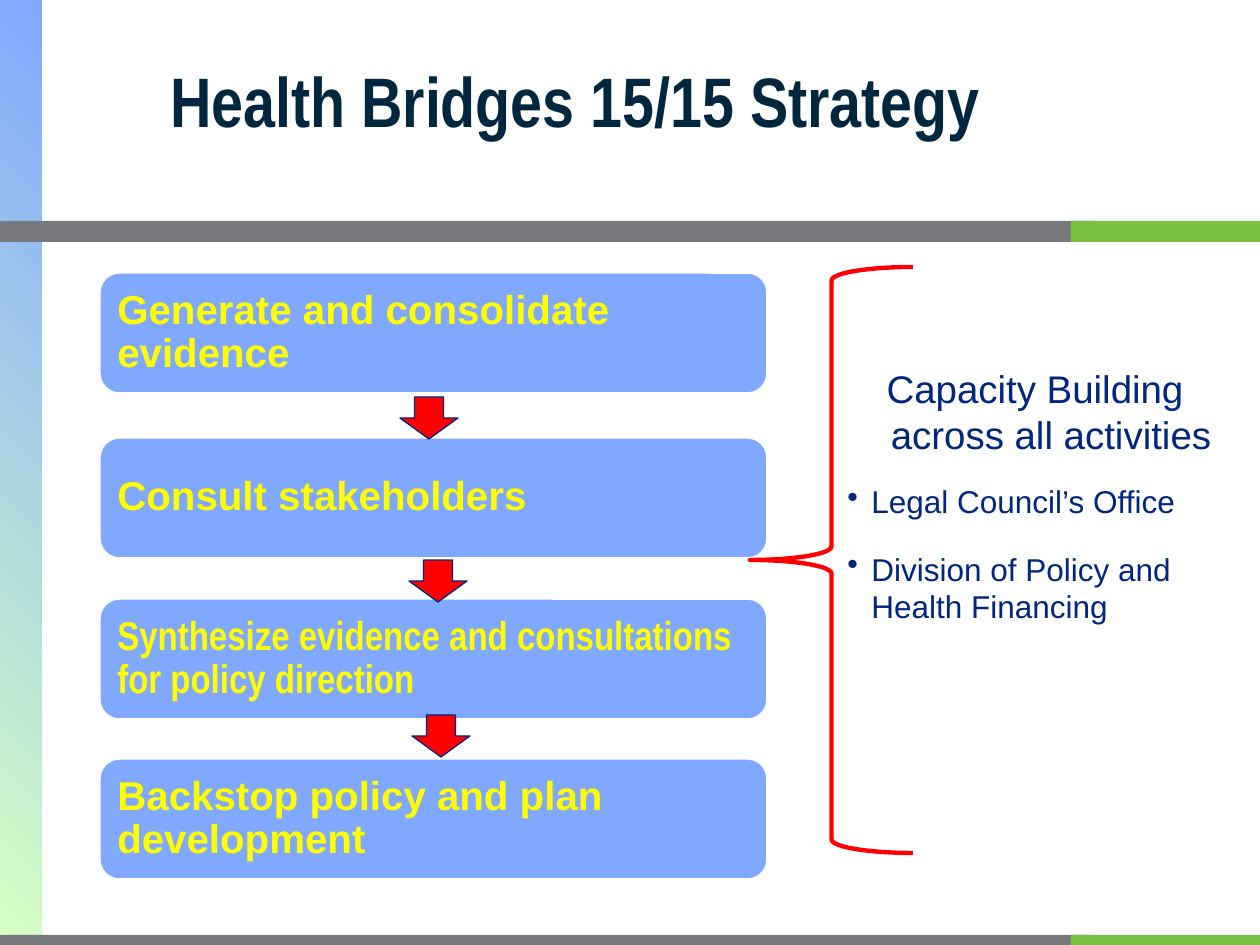
from lxml import etree
from pptx import Presentation
from pptx import util as u
from pptx.dml.color import RGBColor
from pptx.enum import shapes, text
from pptx.oxml import ns

PX = u.Inches(1) / 126
SKY = RGBColor(0x81, 0xA8, 0xFF)
MINT = RGBColor(0xD7, 0xFF, 0xC3)
GREY = RGBColor(0x77, 0x79, 0x7C)
GREEN = RGBColor(0x7A, 0xC1, 0x42)
INK = RGBColor(0x00, 0x27, 0x40)
NAVY = RGBColor(0x00, 0x26, 0x7F)
YELLOW = RGBColor(0xFF, 0xFF, 0x00)
RED = RGBColor(0xFF, 0x00, 0x00)
WHITE = RGBColor(0xFF, 0xFF, 0xFF)
KIND = shapes.MSO_SHAPE

deck = Presentation()
deck.slide_width, deck.slide_height = u.Inches(10), u.Inches(7.5)
slide = deck.slides.add_slide(deck.slide_layouts[6])


def draw(kind, box, fill=None, line=None, weight=1):
    part = slide.shapes.add_shape(kind, *(round(n * PX) for n in box))
    part.shadow.inherit = False
    if fill is None:
        part.fill.background()
    else:
        part.fill.solid()
        part.fill.fore_color.rgb = fill
    if line is None:
        part.line.fill.background()
    else:
        part.line.color.rgb = line
        part.line.width = u.Pt(weight)
    return part


def write(paragraph, words, size, color, font="Arial", bold=False):
    paragraph.text = words
    paragraph.font.size = u.Pt(size)
    paragraph.font.color.rgb = color
    paragraph.font.name = font
    paragraph.font.bold = bold


side_band = draw(KIND.RECTANGLE, (0, 0, 42, 945), SKY)
side_band.fill.gradient()
side_band.fill.gradient_angle = 45
for stop, color in zip(side_band.fill.gradient_stops, (MINT, SKY)):
    stop.color.rgb = color

for top, height in ((221, 21), (935, 10)):
    draw(KIND.RECTANGLE, (0, top, 1092, height), GREY)
    draw(KIND.RECTANGLE, (1071, top, 189, height), GREEN)

title = slide.shapes.add_textbox(*(round(n * PX) for n in (158, 21, 1040, 158))).text_frame
title.word_wrap = True
title.vertical_anchor = text.MSO_ANCHOR.MIDDLE
write(title.paragraphs[0], "Health Bridges 15/15 Strategy", 40, INK, "Arial Narrow", True)

steps = (
    (272, "Generate and consolidate evidence", "Arial"),
    (437, "Consult stakeholders", "Arial"),
    (598, "Synthesize evidence and consultations for policy direction", "Arial Narrow"),
    (758, "Backstop policy and plan development", "Arial"),
)
for top, words, font in steps:
    step = draw(KIND.ROUNDED_RECTANGLE, (99, top, 669, 122), SKY, WHITE, 2).text_frame
    step.word_wrap = True
    step.vertical_anchor = text.MSO_ANCHOR.MIDDLE
    write(step.paragraphs[0], words, 23, YELLOW, font, True)
    step.paragraphs[0].alignment = text.PP_ALIGN.LEFT
    step.paragraphs[0].line_spacing = 0.9

capacity = slide.shapes.add_textbox(*(round(n * PX) for n in (835, 359, 400, 310))).text_frame
capacity.word_wrap = True
entries = (
    ("Capacity Building", 22, 0, 0, False),
    ("across all activities", 22, 32, 0, False),
    ("Legal Council’s Office", 18, 24, 14, True),
    ("Division of Policy and Health Financing", 18, 24, 17, True),
)
for index, (words, size, indent, gap, bulleted) in enumerate(entries):
    entry = capacity.add_paragraph() if index else capacity.paragraphs[0]
    write(entry, words, size, NAVY)
    entry.alignment = text.PP_ALIGN.LEFT if bulleted else text.PP_ALIGN.CENTER
    entry.space_before = u.Pt(gap)
    layout = entry._p.get_or_add_pPr()
    layout.set("marL", str(round(indent * PX)))
    if bulleted:
        layout.set("indent", str(-round(indent * PX)))
        bullet = etree.Element(ns.qn("a:buChar"), char="•")
        layout.find(ns.qn("a:defRPr")).addprevious(bullet)

draw(KIND.LEFT_BRACE, (750, 267, 163, 586), line=RED, weight=2.5)

for left, top in ((400, 397), (409, 560), (412, 715)):
    draw(KIND.DOWN_ARROW, (left, top, 58, 42), RED, NAVY, 0.75)

deck.save("out.pptx")
